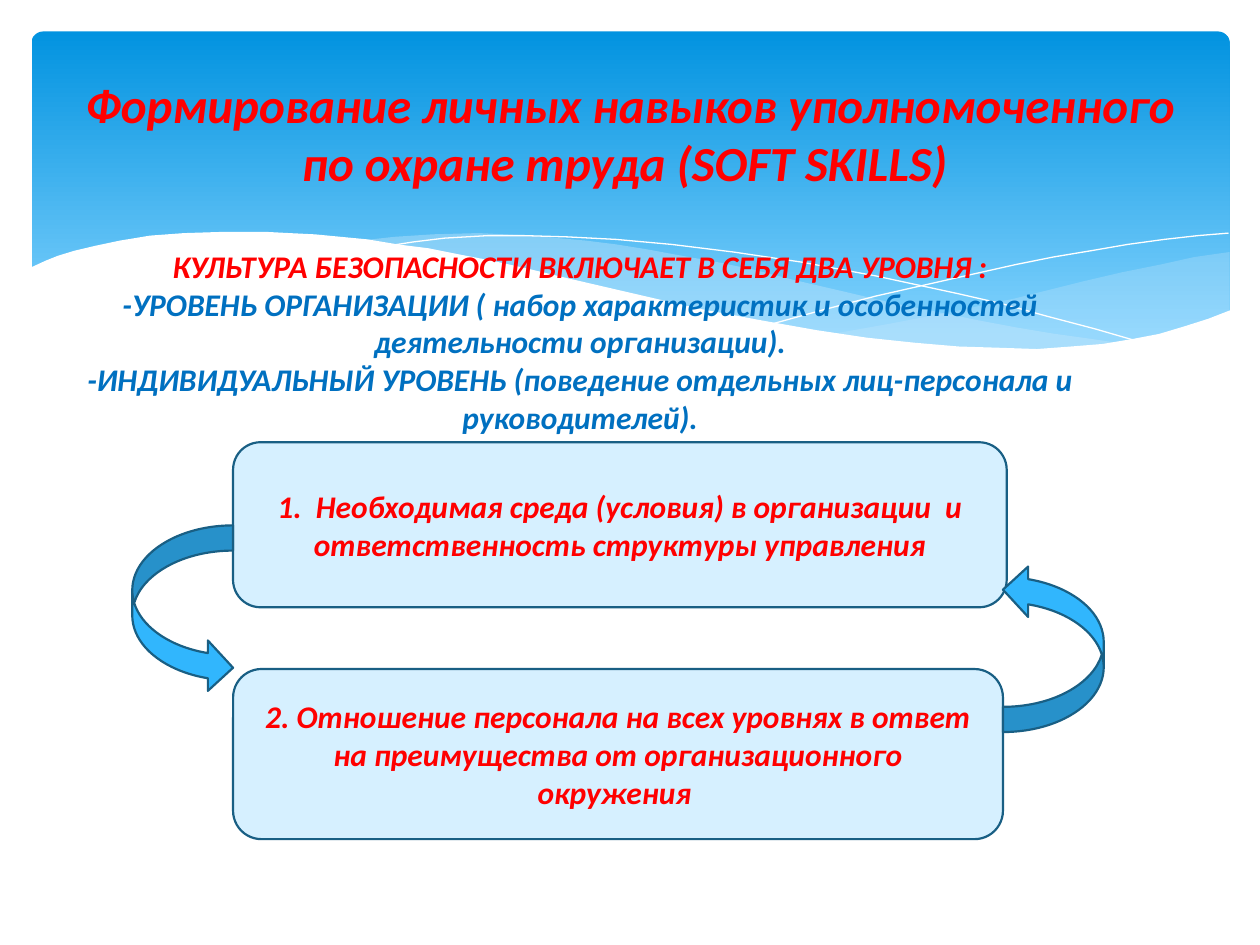
from pptx import Presentation
from pptx.dml.color import RGBColor
from pptx.enum.shapes import MSO_SHAPE
from pptx.enum.text import MSO_ANCHOR, PP_ALIGN
from pptx.oxml.ns import qn
from pptx.util import Inches, Pt
from lxml import etree

ROUND = MSO_SHAPE.ROUNDED_RECTANGLE
ARROW = MSO_SHAPE.CURVED_RIGHT_ARROW
CENTER, TOP, MIDDLE = PP_ALIGN.CENTER, MSO_ANCHOR.TOP, MSO_ANCHOR.MIDDLE

THEME = {
    "font": "Calibri", "title": 28, "body": 18,
    "red": "FF0000", "blue": "0070C0", "white": "FFFFFF",
    "sky_top": "0293E0", "sky_bottom": "83D3FE", "wave": "C6E7FC",
    "card": "D6F0FF", "arrow": "31B6FD", "outline": "195F84", "outline_pt": 1.25,
}

# Content: (text, colour) per paragraph
TITLE = [("Формирование личных навыков уполномоченного по охране труда (SOFT SKILLS) ", "red")]
LEVELS = [
    ("КУЛЬТУРА БЕЗОПАСНОСТИ ВКЛЮЧАЕТ В СЕБЯ ДВА УРОВНЯ :", "red"),
    ("-УРОВЕНЬ ОРГАНИЗАЦИИ ( набор характеристик и особенностей деятельности организации).", "blue"),
    ("-ИНДИВИДУАЛЬНЫЙ УРОВЕНЬ (поведение отдельных лиц-персонала и руководителей).", "blue"),
]
CARDS = [  # box, text
    ((1.85, 3.51, 6.14, 1.31),
     "1.  Необходимая среда (условия) в организации  и ответственность структуры управления"),
    ((1.85, 5.31, 6.11, 1.35),
     "2. Отношение персонала на всех уровнях в ответ на преимущества от организационного окружения "),
]
ARROWS = [((1.05, 4.17, 0.8, 1.33), 0), ((7.96, 4.48, 0.8, 1.33), 180)]

# Banner waves, as (x, y) in inches
RIGHT_WAVE = [
    (9.76, 2), (9.48, 2.04), (9.21, 2.1), (8.91, 2.16), (8.61, 2.23), (8.05, 2.37),
    (7.53, 2.48), (7.06, 2.57), (6.61, 2.65), (6.91, 2.69), (7.19, 2.72), (7.45, 2.75),
    (7.69, 2.77), (8.03, 2.78), (8.35, 2.77), (8.63, 2.75), (8.89, 2.72), (9.13, 2.67),
    (9.35, 2.62), (9.49, 2.57), (9.76, 2.47),
]
MIDDLE_WAVE = [
    (8.93, 2.73), (8.66, 2.69), (8.37, 2.65), (8.07, 2.6), (7.75, 2.54), (7.41, 2.47),
    (7.06, 2.4), (6.68, 2.31), (6.29, 2.22), (5.98, 2.14), (5.69, 2.08), (5.41, 2.03),
    (5.14, 1.98), (4.89, 1.94), (4.65, 1.91), (4.2, 1.87), (3.8, 1.85), (3.44, 1.86),
    (3.13, 1.88), (2.86, 1.91), (3.23, 1.96), (3.62, 2.03), (4.04, 2.11), (4.49, 2.22),
    (4.91, 2.32), (5.3, 2.4), (5.66, 2.48), (6.01, 2.55), (6.34, 2.61), (6.65, 2.66),
    (6.95, 2.7), (7.22, 2.74), (7.48, 2.76), (7.85, 2.78), (8.28, 2.78), (8.57, 2.77),
    (8.76, 2.75),
]
WHITE_WAVE = [
    (9.77, 2.46), (9.59, 2.53), (9.4, 2.59), (9.2, 2.65), (8.99, 2.69), (8.75, 2.73),
    (8.5, 2.75), (8.23, 2.77), (7.93, 2.76), (7.61, 2.75), (7.26, 2.72), (6.88, 2.68),
    (6.48, 2.62), (6.03, 2.54), (5.55, 2.45), (5.03, 2.33), (4.47, 2.2), (4.18, 2.13),
    (3.91, 2.07), (3.65, 2.02), (3.4, 1.97), (3.16, 1.94), (2.92, 1.9), (2.71, 1.88),
    (2.5, 1.86), (2.3, 1.85), (2.11, 1.84), (1.77, 1.84), (1.46, 1.85), (1.19, 1.87),
    (0.95, 1.91), (0.76, 1.95), (0.59, 1.99), (0.46, 2.03), (0.36, 2.07), (0.23, 2.13),
    (0.23, 3.29), (9.77, 3.29),
]
FALLING_LINE = [
    (3.09, 1.95), (3.28, 1.92), (3.53, 1.89), (3.87, 1.87), (4.16, 1.87), (4.5, 1.88),
    (4.89, 1.9), (5.33, 1.94), (5.82, 2), (6.36, 2.08), (6.95, 2.19), (7.6, 2.33),
    (7.95, 2.41), (8.31, 2.51), (8.69, 2.61), (9.07, 2.72),
]
RISING_LINE = [
    (6.13, 2.57), (6.53, 2.46), (6.95, 2.35), (7.48, 2.23), (8.06, 2.1), (8.36, 2.04),
    (8.66, 1.99), (8.95, 1.94), (9.24, 1.9), (9.51, 1.87), (9.75, 1.85),
]


def color(name):
    return RGBColor.from_string(THEME[name])


def write(tf, paragraphs, size, anchor):
    tf.word_wrap = True
    tf.vertical_anchor = anchor
    for i, (text, ink) in enumerate(paragraphs):
        p = tf.paragraphs[0] if i == 0 else tf.add_paragraph()
        p.alignment = CENTER
        r = p.add_run()
        r.text = text
        r.font.name = THEME["font"]
        r.font.size = Pt(THEME[size])
        r.font.bold = r.font.italic = True
        r.font.color.rgb = color(ink)


def add_text(s, box, paragraphs, size, anchor):
    tb = s.shapes.add_textbox(*map(Inches, box))
    write(tb.text_frame, paragraphs, size, anchor)


def add_outlined(s, kind, box, fill):
    sp = s.shapes.add_shape(kind, *map(Inches, box))
    sp.shadow.inherit = False
    sp.fill.solid()
    sp.fill.fore_color.rgb = color(fill)
    sp.line.color.rgb = color("outline")
    sp.line.width = Pt(THEME["outline_pt"])
    return sp


def add_curve(s, points, close):
    pts = [(Inches(x), Inches(y)) for x, y in points]
    fb = s.shapes.build_freeform(*pts[0])
    fb.add_line_segments(pts[1:], close=close)
    sp = fb.convert_to_shape()
    sp.shadow.inherit = False
    return sp


def add_wave(s, points, fill, opacity):
    sp = add_curve(s, points, True)
    sp.line.fill.background()
    sp.fill.solid()
    sp.fill.fore_color.rgb = color(fill)
    if opacity < 100:
        clr = sp.fill._xPr.find(qn("a:solidFill"))[0]
        etree.SubElement(clr, qn("a:alpha")).set("val", str(opacity * 1000))


def add_hairline(s, points):
    sp = add_curve(s, points, False)
    sp.fill.background()
    sp.line.color.rgb = color("white")
    sp.line.width = Pt(0)


def add_banner(s):
    sp = s.shapes.add_shape(ROUND, *map(Inches, (0.25, 0.25, 9.51, 2.7)))
    sp.adjustments[0] = 0.034
    sp.shadow.inherit = False
    sp.line.fill.background()
    sp.fill.gradient()
    sp.fill.gradient_angle = 270
    stops = [(0, "sky_top"), (0.9, "sky_bottom")]
    for stop, (position, name) in zip(sp.fill.gradient_stops, stops):
        stop.position = position
        stop.color.rgb = color(name)
    add_wave(s, RIGHT_WAVE, "wave", 29)
    add_wave(s, MIDDLE_WAVE, "wave", 40)
    add_hairline(s, FALLING_LINE)
    add_hairline(s, RISING_LINE)
    add_wave(s, WHITE_WAVE, "white", 100)


def main():
    prs = Presentation()
    prs.slide_width, prs.slide_height = Inches(10), Inches(7.5)
    s = prs.slides.add_slide(prs.slide_layouts[6])

    # Banner and headings
    add_banner(s)
    add_text(s, (0.5, 0.37, 9, 1.37), TITLE, "title", MIDDLE)
    add_text(s, (0.43, 1.91, 8.35, 1.92), LEVELS, "body", TOP)

    # Two cards and the arrows that cycle between them
    for box, text in CARDS:
        sp = add_outlined(s, ROUND, box, "card")
        write(sp.text_frame, [(text, "red")], "body", MIDDLE)
    for box, turn in ARROWS:
        add_outlined(s, ARROW, box, "arrow").rotation = turn

    prs.save("out.pptx")


if __name__ == "__main__":
    main()
